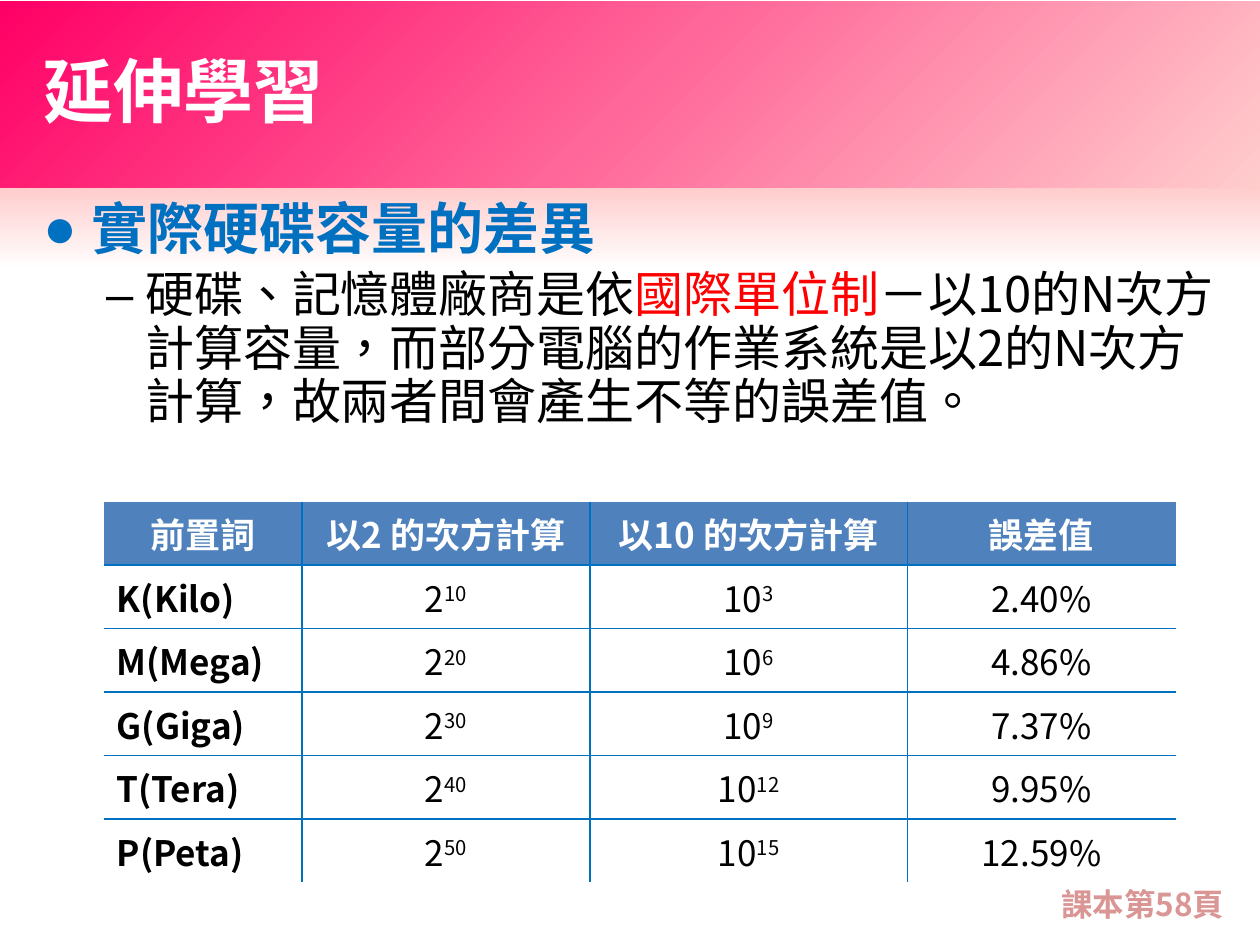
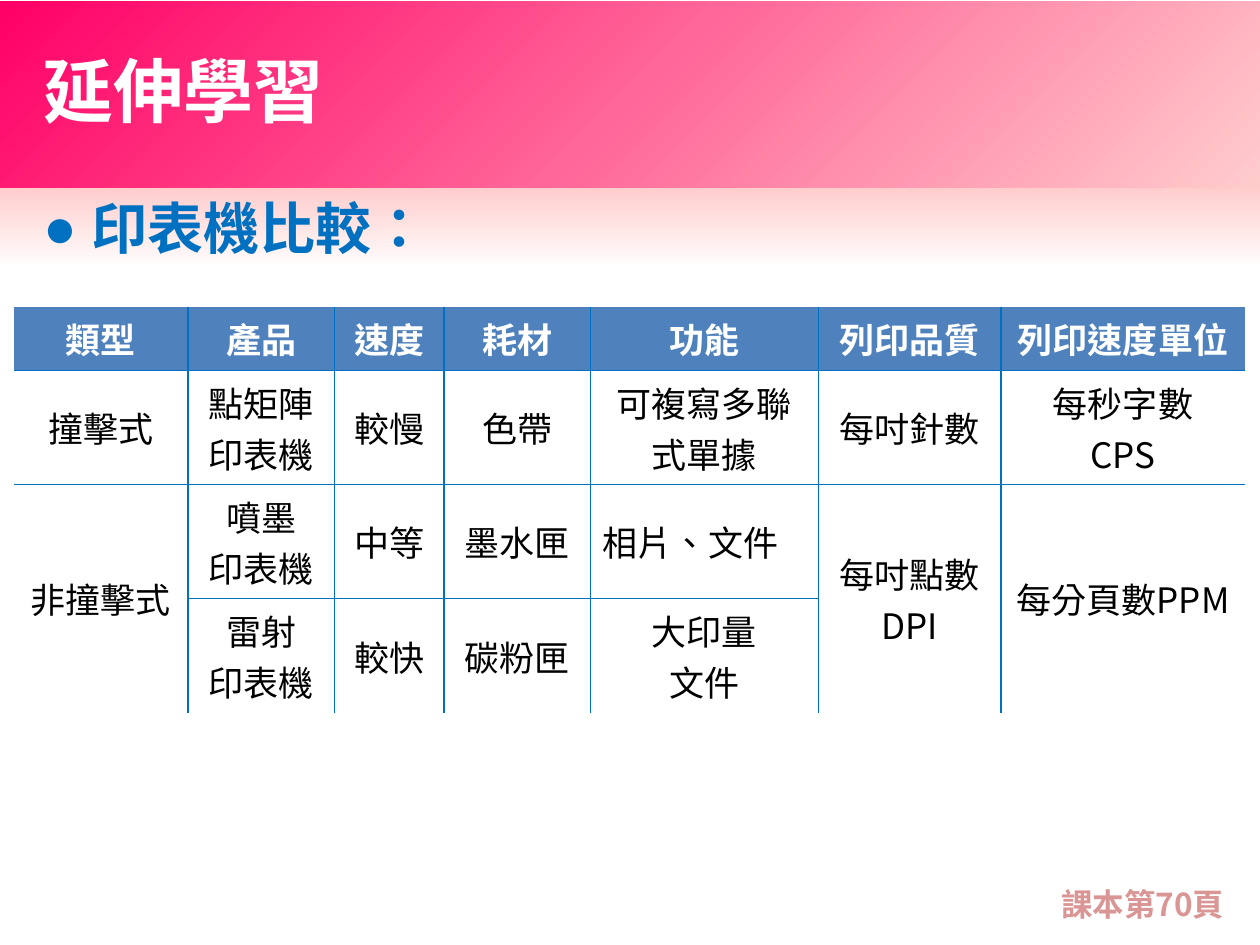
from pptx import Presentation
from pptx.dml.color import RGBColor as RGB
from pptx.enum.shapes import MSO_SHAPE as SHAPE
from pptx.enum.text import MSO_ANCHOR as ANCHOR, PP_ALIGN as ALIGN
from pptx.oxml import parse_xml
from pptx.oxml.ns import nsdecls
from pptx.util import Cm, Pt

FONT = "Noto Sans CJK SC"
COLORS = {
    "white": "FFFFFF", "black": "000000", "red": "FF0000", "blue": "0070C0",
    "header": "4F81BD", "page": "D99694",
    "hot": "FF0066", "pink": "FF6699", "pale": "FFCCCC",
}
TITLE_ONLY = 5


class Deck:
    def __init__(self):
        self.prs = Presentation()
        self.prs.slide_width, self.prs.slide_height = Cm(25.4), Cm(19.05)
        self.layout = self.prs.slide_layouts[TITLE_ONLY]
        self.s = None

    # Text
    def run(self, p, text, size, color="black", bold=False, base=None):
        r = p.add_run()
        r.text = text
        r.font.size, r.font.bold, r.font.name = Pt(size), bold, FONT
        r.font.color.rgb = RGB.from_string(COLORS[color])
        rPr = r._r.get_or_add_rPr()
        rPr.set("lang", "zh-TW")
        rPr.append(parse_xml(f'<a:ea {nsdecls("a")} typeface="{FONT}"/>'))
        if base:
            rPr.set("baseline", str(base * 1000))

    def textbox(self, left, top, width, height):
        tf = self.s.shapes.add_textbox(Cm(left), Cm(top), Cm(width), Cm(height)).text_frame
        tf.word_wrap = True
        return tf

    def bullet(self, p, char, margin, hang):
        pPr = p._p.get_or_add_pPr()
        pPr.set("marL", str(Cm(margin)))
        pPr.set("indent", str(-Cm(hang)))
        pPr.append(parse_xml(f'<a:buFont {nsdecls("a")} typeface="Arial"/>'))
        pPr.append(parse_xml(f'<a:buChar {nsdecls("a")} char="{char}"/>'))
        p.line_spacing = 0.91

    # Bands shared by all slides, kept in the layout
    def band(self, top, height, angle, stops):
        band = self.s.shapes.add_shape(SHAPE.RECTANGLE, 0, Cm(top), Cm(25.4), Cm(height))
        band.shadow.inherit = False
        band.line.fill.background()
        gs = "".join(f'<a:gs pos="{pos * 1000}"><a:srgbClr val="{COLORS[c]}"/></a:gs>'
                     for pos, c in stops)
        band.element.spPr.insert(2, parse_xml(
            f'<a:gradFill {nsdecls("a")} rotWithShape="1"><a:gsLst>{gs}</a:gsLst>'
            f'<a:lin ang="{angle * 60000}" scaled="0"/></a:gradFill>'))
        self.layout.shapes.element.append(band.element)

    def bands(self):
        self.band(3.76, 15.29, 90, [(0, "pale"), (11, "white"), (100, "white")])
        self.band(0.03, 3.76, 45, [(0, "hot"), (50, "pink"), (100, "pale")])

    # Slide with title and page reference
    def slide(self, title, page):
        self.s = self.prs.slides.add_slide(self.layout)
        if len(self.prs.slides) == 1:
            self.bands()
        sp = self.s.shapes.title
        sp.left, sp.top, sp.width, sp.height = Cm(0.62), Cm(0.22), Cm(20.12), Cm(3.18)
        tf = sp.text_frame
        tf.vertical_anchor = ANCHOR.MIDDLE
        p = tf.paragraphs[0]
        p.alignment = ALIGN.LEFT
        self.run(p, title, 40, "white", True)

        p = self.textbox(20.92, 17.72, 4.24, 1.02).paragraphs[0]
        p.alignment = ALIGN.CENTER
        self.run(p, f"課本第{page}頁", 18, "page", True)

    def body(self, heading, detail=()):
        tf = self.textbox(0.62, 3.91, 24.13, 13.54)
        p = tf.paragraphs[0]
        self.bullet(p, "●", 0.97, 0.97)
        self.run(p, heading, 32, "blue", True)
        if detail:
            p = tf.add_paragraph()
            self.bullet(p, "–", 2.06, 0.79)
            p.space_before = Pt(5)
            for text, color in detail:
                self.run(p, text, 28, color)

    # Table with inner rules only
    def borders(self, cell, sides):
        tcPr = cell._tc.get_or_add_tcPr()
        for side, shown in sides.items():
            fill = (f'<a:solidFill><a:srgbClr val="{COLORS["blue"]}"/></a:solidFill>'
                    if shown else "<a:noFill/>")
            tcPr.append(parse_xml(f'<a:ln{side} {nsdecls("a")} w="12700">{fill}</a:ln{side}>'))

    def cell(self, cell, content, header, left, bold):
        cell.vertical_anchor = ANCHOR.MIDDLE
        if header:
            cell.fill.solid()
            cell.fill.fore_color.rgb = RGB.from_string(COLORS["header"])
        else:
            cell.fill.background()
        color = "white" if header else "black"
        number, *power = content if isinstance(content, tuple) else (content,)
        tf = cell.text_frame
        for i, line in enumerate(number.split("\n")):
            p = tf.add_paragraph() if i else tf.paragraphs[0]
            p.alignment = ALIGN.LEFT if left else ALIGN.CENTER
            self.run(p, line, 20, color, header or bold)
        for exponent in power:
            self.run(p, exponent, 20, color, base=30)

    def table(self, left, top, cols, heights, rows, merged_cols=(), left_cells=(), bold_left=False):
        table = self.s.shapes.add_table(len(rows), len(cols), Cm(left), Cm(top),
                                        Cm(sum(cols)), Cm(sum(heights))).table
        table.horz_banding = False
        for col, width in zip(table.columns, cols):
            col.width = Cm(width)
        for row, height in zip(table.rows, heights):
            row.height = Cm(height)
        last = len(rows) - 1
        for c in merged_cols:
            table.cell(last - 1, c).merge(table.cell(last, c))
        for i, row in enumerate(rows):
            for j, content in enumerate(row):
                cell = table.cell(i, j)
                if cell.is_spanned:
                    continue
                bottom = i + cell.span_height - 1 if cell.is_merge_origin else i
                self.borders(cell, {"L": j > 0, "R": j < len(cols) - 1,
                                    "T": i > 0, "B": bottom < last})
                label = bold_left and i > 0 and j == 0
                self.cell(cell, content, i == 0, label or (i, j) in left_cells, label)


def main():
    deck = Deck()

    # Disk capacity
    deck.slide("延伸學習", 58)
    deck.body("實際硬碟容量的差異", [
        ("硬碟、記憶體廠商是依", "black"),
        ("國際單位制", "red"),
        ("－以10的N次方計算容量，而部分電腦的作業系統是以2的N次方計算，"
         "故兩者間會產生不等的誤差值。", "black"),
    ])
    prefixes = [("K(Kilo)", "2.40%"), ("M(Mega)", "4.86%"), ("G(Giga)", "7.37%"),
                ("T(Tera)", "9.95%"), ("P(Peta)", "12.59%")]
    rows = [["前置詞", "以2 的次方計算", "以10 的次方計算", "誤差值"]]
    rows += [[name, ("2", str(10 * n)), ("10", str(3 * n)), error]
             for n, (name, error) in enumerate(prefixes, 1)]
    deck.table(2.1, 10.11, [3.99, 5.8, 6.4, 5.41], [1.28] * 6, rows, bold_left=True)

    # Printer comparison
    deck.slide("延伸學習", 70)
    deck.body("印表機比較：")
    deck.table(0.28, 6.18, [3.51, 2.95, 2.21, 2.95, 4.6, 3.68, 4.92], [1.29] + [2.3] * 3, [
        ["類型", "產品", "速度", "耗材", "功能", "列印品質", "列印速度單位"],
        ["撞擊式", "點矩陣\n印表機", "較慢", "色帶", "可複寫多聯式單據", "每吋針數", "每秒字數\nCPS"],
        ["非撞擊式", "噴墨\n印表機", "中等", "墨水匣", "相片、文件", "每吋點數\nDPI", "每分頁數PPM"],
        ["", "雷射\n印表機", "較快", "碳粉匣", "大印量\n文件", "", ""],
    ], merged_cols=(0, 5, 6), left_cells={(2, 4)})

    deck.prs.save("out.pptx")


if __name__ == "__main__":
    main()
